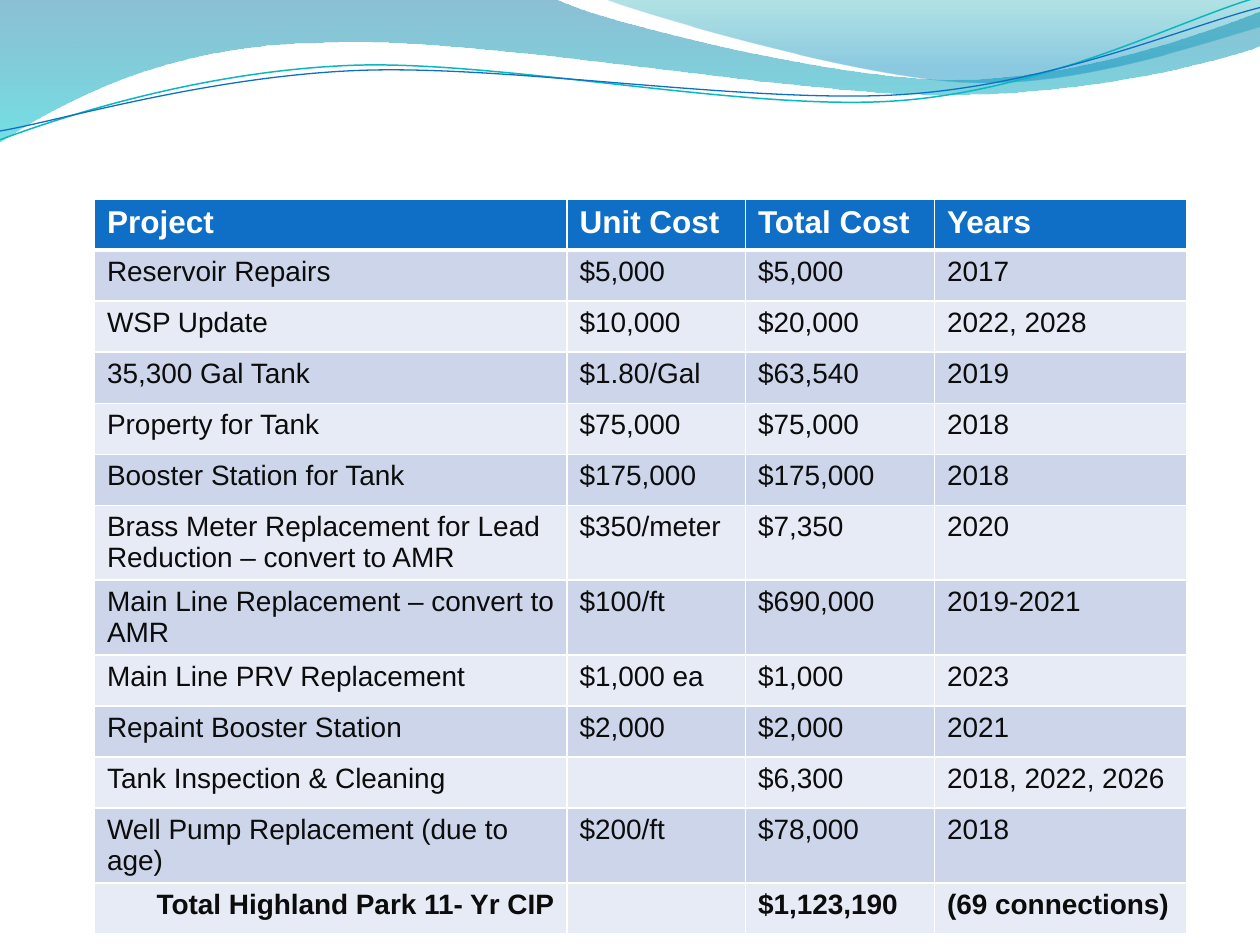
from dataclasses import dataclass

from lxml.etree import SubElement
from pptx import Presentation
from pptx.dml.color import RGBColor
from pptx.enum.text import PP_ALIGN
from pptx.oxml.ns import qn
from pptx.util import Inches, Pt


@dataclass(frozen=True)
class Theme:
    font: str = "Arial"
    head: str = "0F6FC6"
    dark: str = "CCD5EA"
    light: str = "E7EBF5"
    ink: str = "0C0C0C"
    white: str = "FFFFFF"
    teal: str = "0AB8BF"
    big: int = 18
    body: int = 16


@dataclass(frozen=True)
class Stop:
    place: float
    color: str
    alpha: int


@dataclass(frozen=True)
class Wave:
    steps: tuple
    stops: tuple


@dataclass(frozen=True)
class Swirl:
    steps: tuple
    color: str
    width: float


LOOK = Theme()

WAVES = (
    Wave(
        (
            (0, -0.01),
            (4.4, -0.01),
            (4.76, 0.17, 6.64, 0.63, 7.58, 0.63),
            (8.53, 0.63, 9.58, 0.26, 10, 0.09),
            (10.01, 0.36),
            (9.83, 0.44, 8.7, 0.76, 7.46, 0.75),
            (6.22, 0.75, 3.82, 0.28, 2.57, 0.34),
            (1.29, 0.35, 0.46, 0.83, -0.01, 1.13),
            (0, -0.01),
        ),
        (Stop(0, "0074A1", 45), Stop(1, "00C6CF", 55)),
    ),
    Wave(
        (
            (4.79, -0.01),
            (5.09, 0.11, 6.82, 0.62, 7.69, 0.65),
            (8.56, 0.69, 9.61, 0.32, 10, 0.21),
            (10, 0),
            (4.79, -0.01),
        ),
        (Stop(0, "00A1A9", 30), Stop(0.8, "008BBF", 45)),
    ),
)

SWIRLS = (
    Swirl(
        (
            (0, 1.11),
            (0.48, 0.93, 1.58, 0.57, 2.77, 0.52),
            (3.95, 0.47, 5.93, 0.89, 7.13, 0.8),
            (8.33, 0.71, 9.38, 0.15, 9.98, -0.02),
        ),
        LOOK.teal,
        0.85,
    ),
    Swirl(
        (
            (0, 1.04),
            (0.47, 0.96, 1.64, 0.61, 2.83, 0.56),
            (4.03, 0.51, 5.97, 0.83, 7.17, 0.75),
            (8.36, 0.67, 9.41, 0.21, 10, 0.06),
        ),
        LOOK.head,
        0.75,
    ),
)

COLS = (3.75, 17 / 12, 1.5, 2)
ROWS = (
    ("Project", "Unit Cost", "Total Cost", "Years"),
    ("Reservoir Repairs", "$5,000", "$5,000", "2017"),
    ("WSP Update", "$10,000", "$20,000", "2022, 2028"),
    ("35,300 Gal Tank", "$1.80/Gal", "$63,540", "2019"),
    ("Property for Tank", "$75,000", "$75,000", "2018"),
    ("Booster Station for Tank", "$175,000", "$175,000", "2018"),
    ("Brass Meter Replacement for Lead Reduction – convert to AMR",
     "$350/meter", "$7,350", "2020"),
    ("Main Line Replacement – convert to AMR", "$100/ft", "$690,000", "2019-2021"),
    ("Main Line PRV Replacement", "$1,000 ea", "$1,000", "2023"),
    ("Repaint Booster Station", "$2,000", "$2,000", "2021"),
    ("Tank Inspection & Cleaning", "", "$6,300", "2018, 2022, 2026"),
    ("Well Pump Replacement (due to age)", "$200/ft", "$78,000", "2018"),
    ("Total Highland Park 11- Yr CIP", "", "$1,123,190", "(69 connections)"),
)


def rgb(color: str) -> RGBColor:
    return RGBColor.from_string(color)


def outline(slide, steps: tuple, close: bool):
    ends = [(Inches(step[-2]), Inches(step[-1])) for step in steps]
    pen = slide.shapes.build_freeform(*ends[0])
    pen.add_line_segments(ends[1:], close=close)
    shape = pen.convert_to_shape()
    shape.shadow.inherit = False
    lines = list(shape.element.iter(qn("a:lnTo")))
    for line, step in zip(lines, steps[1:]):
        if len(step) == 6:
            bend(shape, line, step)
    return shape


def bend(shape, line, step: tuple) -> None:
    curve = SubElement(line.getparent(), qn("a:cubicBezTo"))
    line.getparent().replace(line, curve)
    for x, y in zip(step[::2], step[1::2]):
        SubElement(curve, qn("a:pt"), x=str(Inches(x) - shape.left),
                   y=str(Inches(y) - shape.top))


def draw_wave(slide, wave: Wave) -> None:
    shape = outline(slide, wave.steps, True)
    shape.line.fill.background()
    shape.fill.gradient()
    shape.fill.gradient_angle = 270
    for stop, tone in zip(shape.fill.gradient_stops, wave.stops):
        stop.position = tone.place
        stop.color.rgb = rgb(tone.color)
    tints = shape.element.spPr.findall(".//" + qn("a:gs") + "/" + qn("a:srgbClr"))
    for tint, tone in zip(tints, wave.stops):
        SubElement(tint, qn("a:alpha"), val=str(tone.alpha * 1000))


def draw_swirl(slide, swirl: Swirl) -> None:
    shape = outline(slide, swirl.steps, False)
    shape.fill.background()
    shape.line.color.rgb = rgb(swirl.color)
    shape.line.width = Pt(swirl.width)


def set_edge(cell, side: str, width: int) -> None:
    props = cell._tc.get_or_add_tcPr()
    edge = SubElement(props, qn(f"a:ln{side}"), w=str(Pt(width)))
    paint = SubElement(edge, qn("a:solidFill"))
    SubElement(paint, qn("a:srgbClr"), val=LOOK.white)


def fill_cell(cell, text: str, row: int, col: int) -> None:
    head, total = row == 0, row == len(ROWS) - 1
    for side in "LRTB":
        thick = (head and side == "B") or (row == 1 and side == "T")
        set_edge(cell, side, 3 if thick else 1)
    cell.fill.solid()
    shade = LOOK.dark if row % 2 else LOOK.light
    cell.fill.fore_color.rgb = rgb(LOOK.head if head else shade)
    if not text:
        return
    para = cell.text_frame.paragraphs[0]
    if total and col == 0:
        para.alignment = PP_ALIGN.RIGHT
    run = para.add_run()
    run.text = text
    run.font.name = LOOK.font
    run.font.size = Pt(LOOK.big if head else LOOK.body)
    run.font.bold = head or total
    run.font.color.rgb = rgb(LOOK.white if head else LOOK.ink)


def draw_costs(slide) -> None:
    tall = Inches(5.27)
    table = slide.shapes.add_table(
        len(ROWS), len(COLS), Inches(0.75), Inches(1.58), Inches(sum(COLS)), tall,
    ).table
    table.horz_banding = False
    for col, width in zip(table.columns, COLS):
        col.width = Inches(width)
    for r, texts in enumerate(ROWS):
        table.rows[r].height = tall // len(ROWS)
        for c, text in enumerate(texts):
            fill_cell(table.cell(r, c), text, r, c)


def main() -> None:
    deck = Presentation()
    deck.slide_width, deck.slide_height = Inches(10), Inches(7.5)
    slide = deck.slides.add_slide(deck.slide_layouts[6])
    for wave in WAVES:
        draw_wave(slide, wave)
    for swirl in SWIRLS:
        draw_swirl(slide, swirl)
    draw_costs(slide)
    deck.save("out.pptx")


if __name__ == "__main__":
    main()
